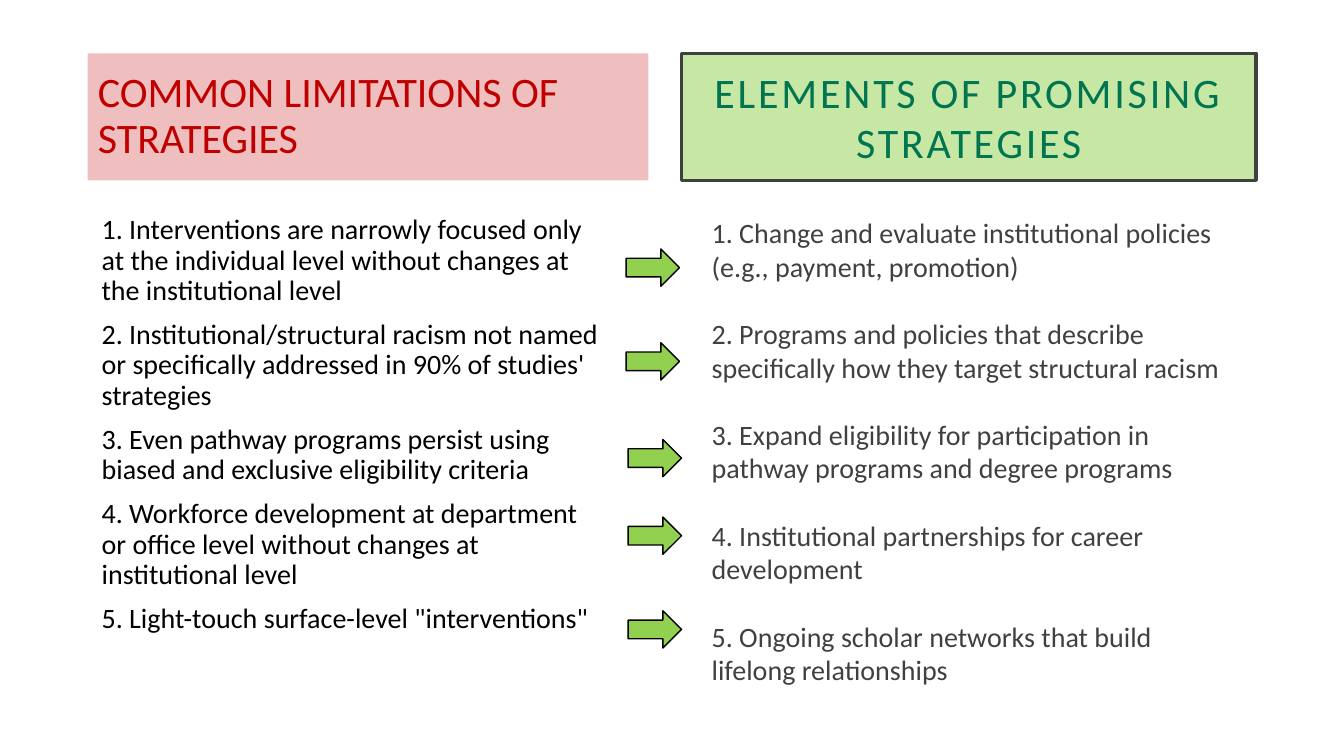
import pptx
import pptx.dml.color
import pptx.enum.shapes
import pptx.enum.text
import pptx.oxml.ns
import pptx.util
import lxml.etree
from dataclasses import dataclass

PX = 9144  # EMU per px, 100 px to the inch
ALIGN = pptx.enum.text.PP_ALIGN
ANCHOR = pptx.enum.text.MSO_ANCHOR
SHAPE = pptx.enum.shapes.MSO_SHAPE


@dataclass(frozen=True)
class Theme:
    font: str = "Calibri"
    heading_size: int = 30
    body_size: int = 20
    red: str = "C00000"
    green: str = "92D050"
    dark_green: str = "007550"
    gray: str = "404040"
    black: str = "000000"


THEME = Theme()

LIMITATIONS = [
    "1. Interventions are narrowly focused only at the individual level without changes at the institutional level",
    "2. Institutional/structural racism not named or specifically addressed in 90% of studies' strategies",
    "3. Even pathway programs persist using biased and exclusive eligibility criteria",
    "4. Workforce development at department or office level without changes at institutional level",
    "5. Light-touch surface-level \"interventions\"",
]
ELEMENTS = [
    "1. Change and evaluate institutional policies (e.g., payment, promotion)",
    "2. Programs and policies that describe specifically how they target structural racism",
    "3. Expand eligibility for participation in pathway programs and degree programs",
    "4. Institutional partnerships for career development",
    "5. Ongoing scholar networks that build lifelong relationships",
]
ARROW_POSITIONS = [(621, 247), (621, 340), (623, 436), (623, 513), (623, 606)]


def px(*lengths):
    return [pptx.util.Emu(length * PX) for length in lengths]


def set_attributes(target, values):
    for name, value in values.items():
        setattr(target, name, value)


def set_fill(shape, color, opacity=100):
    shape.fill.solid()
    shape.fill.fore_color.rgb = pptx.dml.color.RGBColor.from_string(color)
    if opacity < 100:
        color_element = shape.fill._xPr.find(".//" + pptx.oxml.ns.qn("a:srgbClr"))
        alpha = lxml.etree.SubElement(color_element, pptx.oxml.ns.qn("a:alpha"))
        alpha.set("val", str(opacity * 1000))


def set_line(shape, color, width):
    shape.line.color.rgb = pptx.dml.color.RGBColor.from_string(color)
    shape.line.width = pptx.util.Pt(width)


def write_text(shape, texts, size, color, paragraph_format, anchor=ANCHOR.TOP, margin=None, spacing=0):
    frame = shape.text_frame
    frame_format = {
        "word_wrap": True,
        "auto_size": pptx.enum.text.MSO_AUTO_SIZE.NONE,
        "vertical_anchor": anchor,
    }
    if margin is not None:
        for side in ("left", "top", "right", "bottom"):
            frame_format["margin_" + side] = px(margin)[0]
    set_attributes(frame, frame_format)
    for index, text in enumerate(texts):
        paragraph = frame.add_paragraph() if index else frame.paragraphs[0]
        set_attributes(paragraph, paragraph_format)
        run = paragraph.add_run()
        run.text = text
        set_attributes(run.font, {"name": THEME.font, "size": pptx.util.Pt(size)})
        run.font.color.rgb = pptx.dml.color.RGBColor.from_string(color)
        if spacing:
            run.font._element.set("spc", str(spacing * 100))


def format_title(slide, text, box):
    title = slide.shapes.title
    set_attributes(title, dict(zip(("left", "top", "width", "height"), px(*box))))
    set_fill(title, THEME.red, 25)
    write_text(title, [text], THEME.heading_size, THEME.red,
               {"alignment": ALIGN.LEFT, "line_spacing": 0.9}, ANCHOR.MIDDLE)


def add_shape(slide, kind, box, color, opacity, line_color, line_width):
    shape = slide.shapes.add_shape(kind, *px(*box))
    shape.shadow.inherit = False
    set_fill(shape, color, opacity)
    set_line(shape, line_color, line_width)
    return shape


def add_heading(slide, text, box):
    heading = add_shape(slide, SHAPE.RECTANGLE, box, THEME.green, 51, THEME.gray, 2.5)
    write_text(heading, [text], THEME.heading_size, THEME.dark_green,
               {"alignment": ALIGN.CENTER, "space_before": pptx.util.Pt(6)},
               ANCHOR.MIDDLE, margin=20, spacing=2)


def add_list(slide, texts, box, color, paragraph_format):
    text_box = slide.shapes.add_textbox(*px(*box))
    write_text(text_box, texts, THEME.body_size, color, paragraph_format)


def main():
    presentation = pptx.Presentation()
    presentation.slide_width, presentation.slide_height = px(1333, 750)
    slide = presentation.slides.add_slide(presentation.slide_layouts[5])

    # Left column: limitations
    format_title(slide, "COMMON LIMITATIONS OF STRATEGIES", (87, 53, 556, 126))
    add_list(slide, LIMITATIONS, (91, 209, 514, 434), THEME.black,
             {"line_spacing": 0.9, "space_before": pptx.util.Pt(10)})

    # Right column: promising elements
    add_list(slide, ELEMENTS, (696, 209, 539, 481), THEME.gray,
             {"space_after": pptx.util.Pt(24)})
    add_heading(slide, "ELEMENTS OF PROMISING STRATEGIES", (676, 53, 570, 126))

    # Arrows from each limitation to its answer
    for left, top in ARROW_POSITIONS:
        add_shape(slide, SHAPE.RIGHT_ARROW, (left, top, 53, 37), THEME.green, 100, THEME.black, 1)

    presentation.save("out.pptx")


if __name__ == "__main__":
    main()
